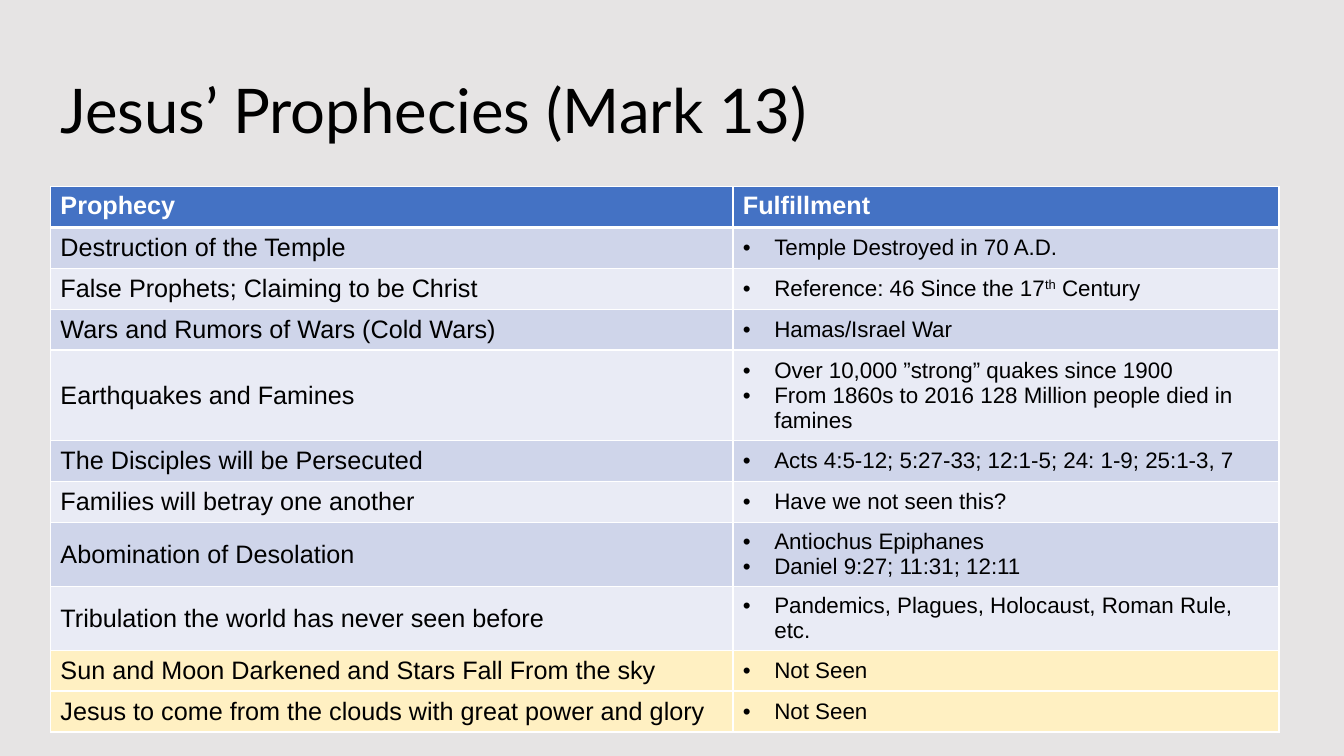
from lxml.etree import SubElement
from pptx import Presentation
from pptx.dml.color import RGBColor
from pptx.enum.text import MSO_ANCHOR as Anchor
from pptx.oxml.ns import qn
from pptx.util import Cm, Pt

WHITE, BLACK = "FFFFFF", "000000"
HEADER_FILL, SEEN_FILLS, UNSEEN_FILL = "4472C4", ("CFD5EA", "E9EBF5"), "FFF0C2"
HEADINGS = ("Prophecy", "Fulfillment")
UNSEEN = "Not Seen"
PROPHECIES = [
    ("Destruction of the Temple", ["Temple Destroyed in 70 A.D."]),
    ("False Prophets; Claiming to be Christ", ["Reference: 46 Since the 17^th^ Century"]),
    ("Wars and Rumors of Wars (Cold Wars)", ["Hamas/Israel War"]),
    ("Earthquakes and Famines", [
        "Over 10,000 ”strong” quakes since 1900",
        "From 1860s to 2016 128 Million people died in famines",
    ]),
    ("The Disciples will be Persecuted", ["Acts 4:5-12; 5:27-33; 12:1-5; 24: 1-9; 25:1-3, 7"]),
    ("Families will betray one another", ["Have we not seen this?"]),
    ("Abomination of Desolation", ["Antiochus Epiphanes", "Daniel 9:27; 11:31; 12:11"]),
    ("Tribulation the world has never seen before",
     ["Pandemics, Plagues, Holocaust, Roman Rule, etc."]),
    ("Sun and Moon Darkened and Stars Fall From the sky", [UNSEEN]),
    ("Jesus to come from the clouds with great power and glory", [UNSEEN]),
]
TITLE_FORMAT = {"name": "Lato", "size": Pt(44), "bold": False}
HEADER_FORMAT = {"name": "Arial", "size": Pt(18), "bold": True}
PROPHECY_FORMAT = {"name": "Arial", "size": Pt(18), "bold": False}
FULFILLMENT_FORMAT = {"name": "Arial", "size": Pt(16), "bold": False}


def color(hex_string):
    return RGBColor.from_string(hex_string)


def write(paragraph, text, font_format, text_color):
    for index, part in enumerate(text.split("^")):
        run = paragraph.add_run()
        run.text = part
        for attribute, value in font_format.items():
            setattr(run.font, attribute, value)
        run.font.color.rgb = color(text_color)
        if index % 2:
            run.font._element.set("baseline", "30000")


def add_bullet(paragraph):
    properties = paragraph._p.get_or_add_pPr()
    properties.set("marL", str(Cm(0.79)))
    properties.set("indent", str(-Cm(0.79)))
    SubElement(properties, qn("a:buFont"), typeface="Arial")
    SubElement(properties, qn("a:buChar"), char="•")


def style_cell(cell, fill, top=1, bottom=1):
    properties = cell._tc.get_or_add_tcPr()
    for side, width in {"lnL": 1, "lnR": 1, "lnT": top, "lnB": bottom}.items():
        line = SubElement(properties, qn(f"a:{side}"), w=str(Pt(width)))
        solid = SubElement(line, qn("a:solidFill"))
        SubElement(solid, qn("a:srgbClr"), val=WHITE)
    cell.fill.solid()
    cell.fill.fore_color.rgb = color(fill)


def add_title(slide, left, top, width, height):
    frame = slide.shapes.add_textbox(left, top, width, height).text_frame
    frame.word_wrap = True
    frame.vertical_anchor = Anchor.MIDDLE
    paragraph = frame.paragraphs[0]
    paragraph.line_spacing = 0.9
    write(paragraph, "Jesus’ Prophecies (Mark 13)", TITLE_FORMAT, BLACK)


def add_prophecy_table(slide, left, top, width, row_height):
    row_count = len(PROPHECIES) + 1
    table = slide.shapes.add_table(
        row_count, 2, left, top, width, row_height * row_count).table
    table.columns[0].width = Cm(17.2)
    table.columns[1].width = width - Cm(17.2)
    for cell, heading in zip(table.rows[0].cells, HEADINGS):
        style_cell(cell, HEADER_FILL, bottom=3)
        write(cell.text_frame.paragraphs[0], heading, HEADER_FORMAT, WHITE)
    for index, (prophecy, fulfillments) in enumerate(PROPHECIES):
        fill = UNSEEN_FILL if fulfillments == [UNSEEN] else SEEN_FILLS[index % 2]
        cells = list(table.rows[index + 1].cells)
        for cell in cells:
            style_cell(cell, fill, top=1 if index else 3)
            cell.vertical_anchor = Anchor.MIDDLE
        write(cells[0].text_frame.paragraphs[0], prophecy, PROPHECY_FORMAT, BLACK)
        frame = cells[1].text_frame
        for number, fulfillment in enumerate(fulfillments):
            paragraph = frame.add_paragraph() if number else frame.paragraphs[0]
            add_bullet(paragraph)
            write(paragraph, fulfillment, FULFILLMENT_FORMAT, BLACK)


def main():
    presentation = Presentation()
    presentation.slide_width, presentation.slide_height = Cm(33.87), Cm(19.05)
    slide = presentation.slides.add_slide(presentation.slide_layouts[6])
    slide.background.fill.solid()
    slide.background.fill.fore_color.rgb = color("E6E4E4")
    add_title(slide, Cm(1.27), Cm(1.02), Cm(30.28), Cm(3.68))
    add_prophecy_table(slide, Cm(1.27), Cm(4.7), Cm(30.96), Cm(1.03))
    presentation.save("out.pptx")


if __name__ == "__main__":
    main()
